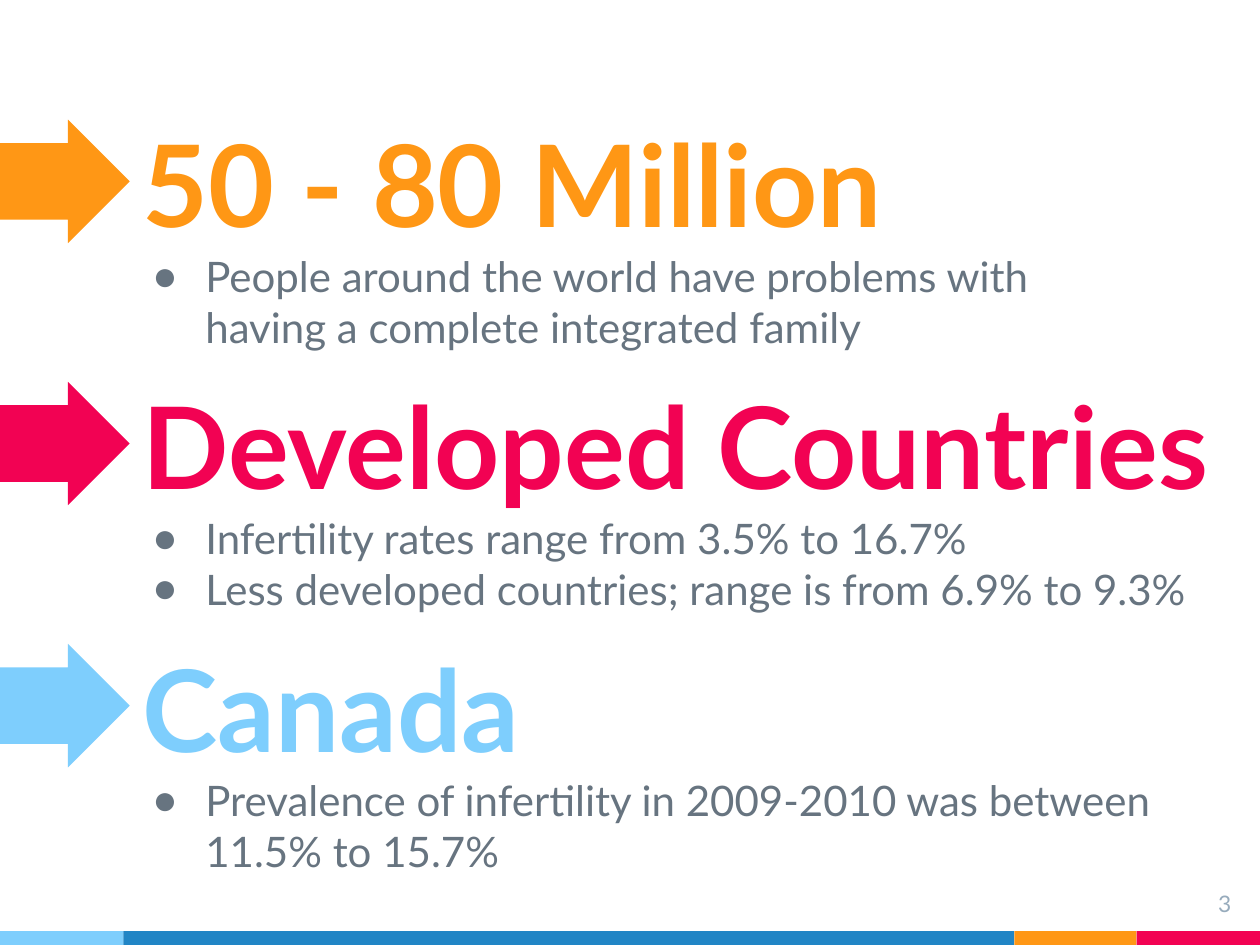
from pptx import Presentation
from pptx.dml.color import RGBColor
from pptx.enum.shapes import MSO_SHAPE as Shape
from pptx.enum.text import MSO_ANCHOR as Anchor, MSO_AUTO_SIZE as Fit, PP_ALIGN as Align
from pptx.oxml.ns import qn
from pptx.util import Inches, Pt
from lxml.etree import SubElement

ORANGE = RGBColor(0xFF, 0x97, 0x15)
PINK = RGBColor(0xF2, 0x02, 0x53)
SKY = RGBColor(0x7E, 0xCE, 0xFD)
BLUE = RGBColor(0x21, 0x85, 0xC5)
SLATE = RGBColor(0x67, 0x74, 0x80)
GREY = RGBColor(0x97, 0xAB, 0xBC)

WIDE, HIGH = 10, 7.5
TOP, STEP = 0.78, 2.08  # first row and row pitch
HEAD = {"size": Pt(65), "bold": True}
BODY = {"size": Pt(24), "bold": False}
NOTE = {"size": Pt(13), "bold": False}

ROWS = [
    ("50 - 80 Million", ORANGE, 8.22,
     ["People around the world have problems with having a complete integrated family"]),
    ("Developed Countries", PINK, 8.85,
     ["Infertility rates range from 3.5% to 16.7%",
      "Less developed countries; range is from 6.9% to 9.3%"]),
    ("Canada", SKY, 8.22,
     ["Prevalence of infertility in 2009-2010 was between 11.5% to 15.7%"]),
]
BANDS = [(SKY, 0.98), (BLUE, 7.07), (ORANGE, 0.97), (PINK, 0.98)]


def place(shape, box):
    for name, value in zip(("left", "top", "width", "height"), box):
        setattr(shape, name, Inches(value))


def block(slide, kind, box, color):
    shape = slide.shapes.add_shape(kind, *map(Inches, box))
    shape.shadow.inherit = False
    shape.fill.solid()
    shape.fill.fore_color.rgb = color
    shape.line.fill.background()
    return shape


def write(shape, lines, style, color, align=Align.LEFT, anchor=Anchor.TOP):
    frame = shape.text_frame
    frame.text = "\n".join(lines)
    form = {"word_wrap": True, "auto_size": Fit.NONE, "vertical_anchor": anchor}
    form |= {f"margin_{side}": Inches(0.1) for side in ("left", "top", "right", "bottom")}
    for name, value in form.items():
        setattr(frame, name, value)
    for para in frame.paragraphs:
        para.alignment = align
        para.space_before = Pt(0)
        font = para.runs[0].font
        for name, value in ({"name": "Lato"} | style).items():
            setattr(font, name, value)
        font.color.rgb = color


def bullet(para, color):
    props = para._p.get_or_add_pPr()
    props.set("marL", str(Inches(0.5)))
    props.set("indent", str(Inches(-0.42)))
    tint = SubElement(props, qn("a:buClr"))
    SubElement(tint, qn("a:srgbClr")).set("val", str(color))
    SubElement(props, qn("a:buChar")).set("char", "●")


def fact(slide, pair, box, title, color, items):
    """Arrow, heading and list in one row."""
    left, top, width = box
    head, body = pair
    place(head, (left, top, width, 1.31))
    write(head, [title], HEAD, color, anchor=Anchor.BOTTOM)
    place(body, (left, top + 1.11, width, 1.16))
    write(body, items, BODY, SLATE)
    for para in body.text_frame.paragraphs:
        bullet(para, SLATE)
    body.text_frame.paragraphs[0].space_before = Pt(6)
    arrow = block(slide, Shape.RIGHT_ARROW, (0, top + 0.17, left, 0.98), color)
    arrow.adjustments[0] = 0.62
    arrow.adjustments[1] = 0.5


def strip(slide, box):
    """Coloured bands along the foot."""
    left, top, high = box
    for color, width in BANDS:
        block(slide, Shape.RECTANGLE, (left, top, width, high), color)
        left += width


def number(slide, box):
    """Page number."""
    note = slide.shapes.add_textbox(*map(Inches, box))
    write(note, ["3"], NOTE, GREY, Align.RIGHT)


def main():
    prs = Presentation()
    prs.slide_width, prs.slide_height = Inches(WIDE), Inches(HIGH)
    layout = prs.slide_layouts[0]
    slide = prs.slides.add_slide(layout)

    # One title and subtitle pair for each row
    for _ in ROWS[1:]:
        for holder in list(layout.placeholders)[:2]:
            slide.shapes.clone_placeholder(holder)
    parts = list(slide.shapes)
    pairs = zip(parts[::2], parts[1::2])

    strip(slide, (0, HIGH - 0.11, 0.11))
    for row, (pair, (title, color, width, items)) in enumerate(zip(pairs, ROWS)):
        fact(slide, pair, (1.03, TOP + row * STEP, width), title, color, items)
    number(slide, (9.27, 6.96, 0.6, 0.46))
    prs.save("out.pptx")


if __name__ == "__main__":
    main()
